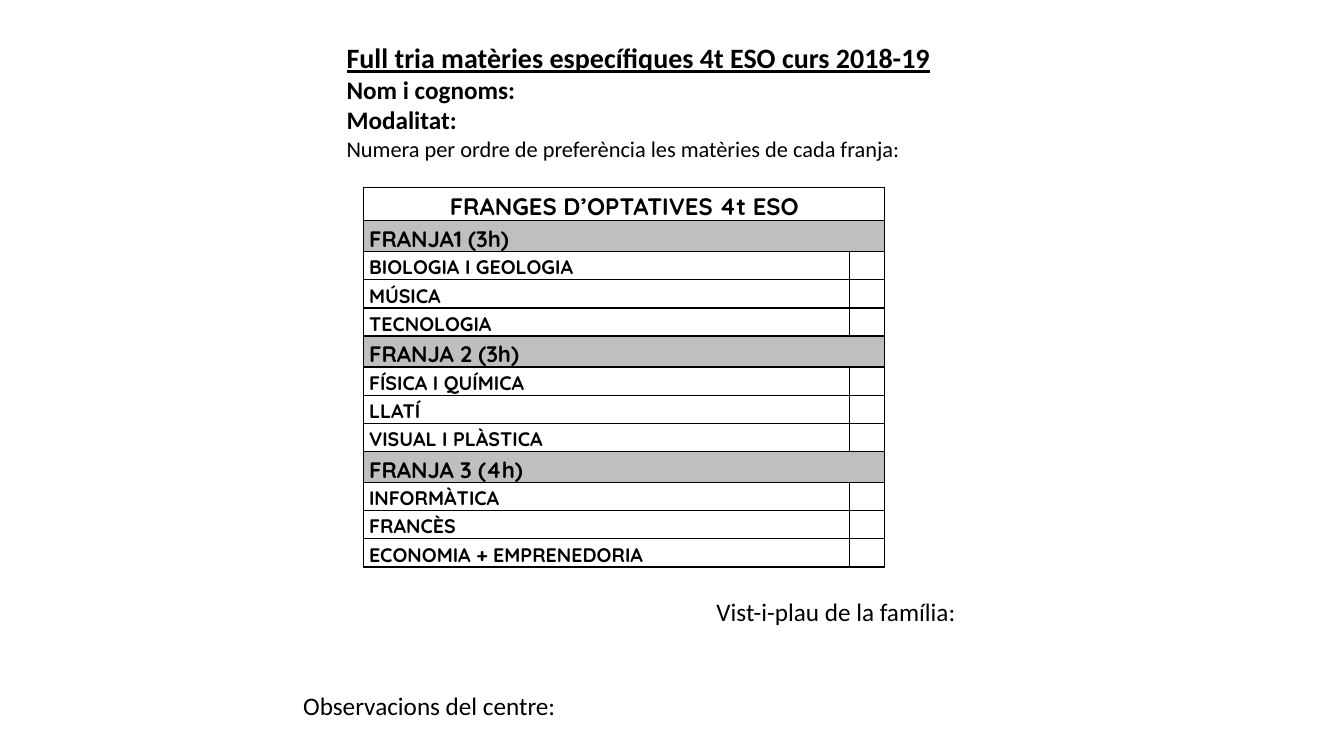
"""Build the form for choosing the specific subjects of 4t ESO."""
from dataclasses import dataclass

from lxml.etree import SubElement
from pptx import Presentation
from pptx.dml.color import RGBColor as RGB
from pptx.enum.text import MSO_ANCHOR as Anchor, MSO_AUTO_SIZE as Fit, PP_ALIGN as Align
from pptx.oxml.ns import qn
from pptx.util import Cm, Pt


@dataclass
class Theme:
    ink: RGB = RGB(0, 0, 0)
    paper: RGB = RGB(255, 255, 255)
    band: RGB = RGB(0xBF, 0xBF, 0xBF)
    body: str = "Calibri"
    grid: str = "Quicksand"
    title: int = 20
    label: int = 18
    note: int = 16
    head: int = 17
    group: int = 16
    item: int = 14


theme = Theme()


def style(para, size, face, bold=False):
    for run in para.runs:
        run.font.size = Pt(size)
        run.font.name = face
        run.font.bold = bold
        run.font.color.rgb = theme.ink


def border(cell):
    props = cell._tc.get_or_add_tcPr()
    for side in ("lnL", "lnR", "lnT", "lnB"):
        line = SubElement(props, qn(f"a:{side}"), w=str(Pt(1)))
        fill = SubElement(line, qn("a:solidFill"))
        SubElement(fill, qn("a:srgbClr"), val=str(theme.ink))


deck = Presentation()
deck.slide_width, deck.slide_height = Cm(33.87), Cm(19.05)
slide = deck.slides.add_slide(deck.slide_layouts[5])

title = slide.shapes.title
title.left, title.top, title.width, title.height = Cm(8.48), Cm(0.89), Cm(15.34), Cm(3.33)
frame = title.text_frame
frame.text = "\n".join([
    "Full tria matèries específiques 4t ESO curs 2018-19",
    "Nom i cognoms:",
    "Modalitat:",
    "Numera per ordre de preferència les matèries de cada franja:",
])
frame.word_wrap = False
frame.auto_size = Fit.SHAPE_TO_FIT_TEXT
frame.vertical_anchor = Anchor.MIDDLE
sizes = [theme.title, theme.label, theme.label, theme.note]
for para, size in zip(frame.paragraphs, sizes):
    para.alignment = Align.LEFT
    style(para, size, theme.body, size != theme.note)
frame.paragraphs[0].runs[0].font.underline = True

groups = {
    "FRANJA1 (3h)": ["BIOLOGIA I GEOLOGIA", "MÚSICA", "TECNOLOGIA"],
    "FRANJA 2 (3h)": ["FÍSICA I QUÍMICA", "LLATÍ", "VISUAL I PLÀSTICA"],
    "FRANJA 3 (4h)": ["INFORMÀTICA", "FRANCÈS", "ECONOMIA + EMPRENEDORIA"],
}
rows = [("FRANGES D’OPTATIVES 4t ESO", theme.head, 0.84)]
for group, items in groups.items():
    rows.append((group, theme.group, 0.76))
    rows += [(item, theme.item, 0.71) for item in items]

tall = sum(high for _, _, high in rows)
table = slide.shapes.add_table(len(rows), 2, Cm(9.17), Cm(4.72), Cm(13.13), Cm(tall)).table
table.first_row = table.horz_banding = False
table.columns[0].width, table.columns[1].width = Cm(12.24), Cm(0.89)

for index, (text, size, high) in enumerate(rows):
    table.rows[index].height = Cm(high)
    name, box = table.cell(index, 0), table.cell(index, 1)
    name.text = text
    para = name.text_frame.paragraphs[0]
    para.line_spacing = 1.15
    style(para, size, theme.grid, True)
    SubElement(box.text_frame.paragraphs[0]._p, qn("a:endParaRPr"), sz="1000")
    for cell in (name, box):
        cell.margin_left = cell.margin_right = Cm(0.13)
        cell.margin_top = cell.margin_bottom = 0
        border(cell)
        cell.fill.solid()
        cell.fill.fore_color.rgb = theme.band if text in groups else theme.paper
    if size != theme.item:
        name.merge(box)
table.cell(0, 0).text_frame.paragraphs[0].alignment = Align.CENTER

frame = slide.shapes.add_textbox(Cm(7.39), Cm(14.91), Cm(16.94), Cm(3.4)).text_frame
frame.word_wrap = True
frame.auto_size = Fit.SHAPE_TO_FIT_TEXT
frame.text = "Vist-i-plau de la família:\nObservacions del centre:"
family, centre = frame.paragraphs
family.alignment = Align.RIGHT
centre.space_before = Pt(45)
for para in (family, centre):
    style(para, theme.label, theme.body)

deck.save("out.pptx")
